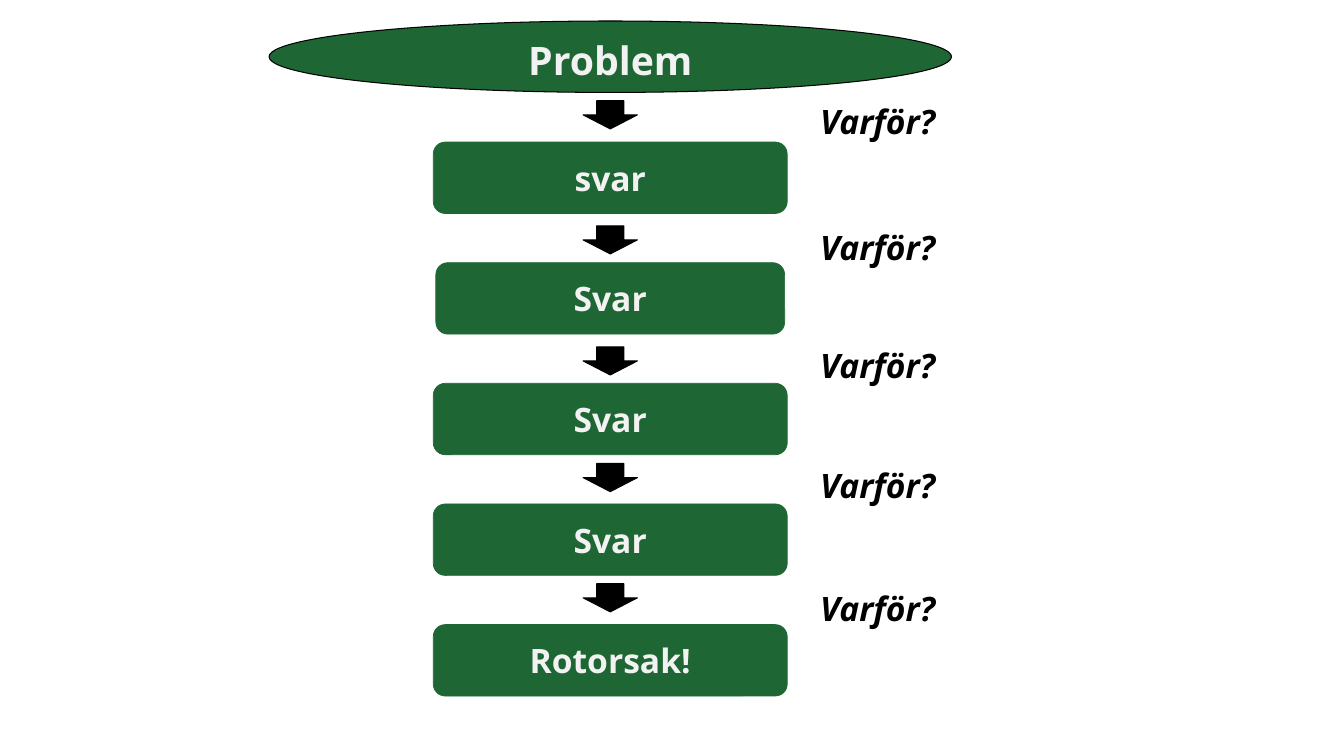
import dataclasses

import pptx
import pptx.dml.color
import pptx.enum.shapes
import pptx.enum.text
import pptx.util

Cm = pptx.util.Cm
Pt = pptx.util.Pt
Kind = pptx.enum.shapes.MSO_SHAPE
Anchor = pptx.enum.text.MSO_ANCHOR
Align = pptx.enum.text.PP_ALIGN


@dataclasses.dataclass(frozen=True)
class Theme:
    font: str = "Open Sans"
    green: str = "1E6633"
    black: str = "000000"
    pale: str = "F2F2F2"
    head: int = 28
    body: int = 24


THEME = Theme()
AXIS = 15.38
HIGH = 1.8


def tint(code):
    return pptx.dml.color.RGBColor.from_string(code)


def write(frame, text, size, color, align, italic=False):
    para = frame.paragraphs[0]
    para.alignment = align
    run = para.add_run()
    run.text = text
    run.font.name = THEME.font
    run.font.size = Pt(size)
    run.font.bold = True
    run.font.italic = italic
    run.font.color.rgb = tint(color)


def add_form(slide, kind, top, width, height, fill, edge, weight):
    form = slide.shapes.add_shape(
        kind, Cm(AXIS - width / 2), Cm(top), Cm(width), Cm(height))
    form.shadow.inherit = False
    form.fill.solid()
    form.fill.fore_color.rgb = tint(fill)
    form.line.color.rgb = tint(edge)
    form.line.width = Pt(weight)
    return form


def add_problem(slide, text):
    form = add_form(slide, Kind.OVAL, 0.53, 17.2, HIGH,
                    THEME.green, THEME.black, 0.75)
    form.text_frame.vertical_anchor = Anchor.TOP
    write(form.text_frame, text, THEME.head, THEME.pale, Align.CENTER)


def add_answer(slide, text, top, width):
    form = add_form(slide, Kind.ROUNDED_RECTANGLE, top, width, HIGH,
                    THEME.green, THEME.green, 0.5)
    form.text_frame.vertical_anchor = Anchor.MIDDLE
    write(form.text_frame, text, THEME.body, THEME.pale, Align.CENTER)


def add_arrow(slide, top):
    add_form(slide, Kind.DOWN_ARROW, top, 1.37, 0.71,
             THEME.black, THEME.black, 0.75)


def add_label(slide, text, top):
    box = slide.shapes.add_textbox(Cm(20.42), Cm(top), Cm(3.53), Cm(1.28))
    box.text_frame.word_wrap = False
    box.text_frame.auto_size = pptx.enum.text.MSO_AUTO_SIZE.SHAPE_TO_FIT_TEXT
    write(box.text_frame, text, THEME.body, THEME.black, Align.LEFT, True)


def main():
    deck = pptx.Presentation()
    deck.slide_width = Cm(33.87)
    deck.slide_height = Cm(19.05)
    slide = deck.slides.add_slide(deck.slide_layouts[6])

    add_problem(slide, "Problem")
    answers = [("svar", 8.92), ("Svar", 8.79), ("Svar", 8.92),
               ("Svar", 8.92), ("Rotorsak!", 8.92)]
    for step, (text, width) in enumerate(answers):
        add_answer(slide, text, 3.58 + 3.04 * step, width)
    for top in (2.54, 5.69, 8.74, 11.68, 14.71):
        add_arrow(slide, top)
    for top in (2.41, 5.59, 8.56, 11.58, 14.68):
        add_label(slide, "Varför?", top)

    deck.save("out.pptx")


if __name__ == "__main__":
    main()
